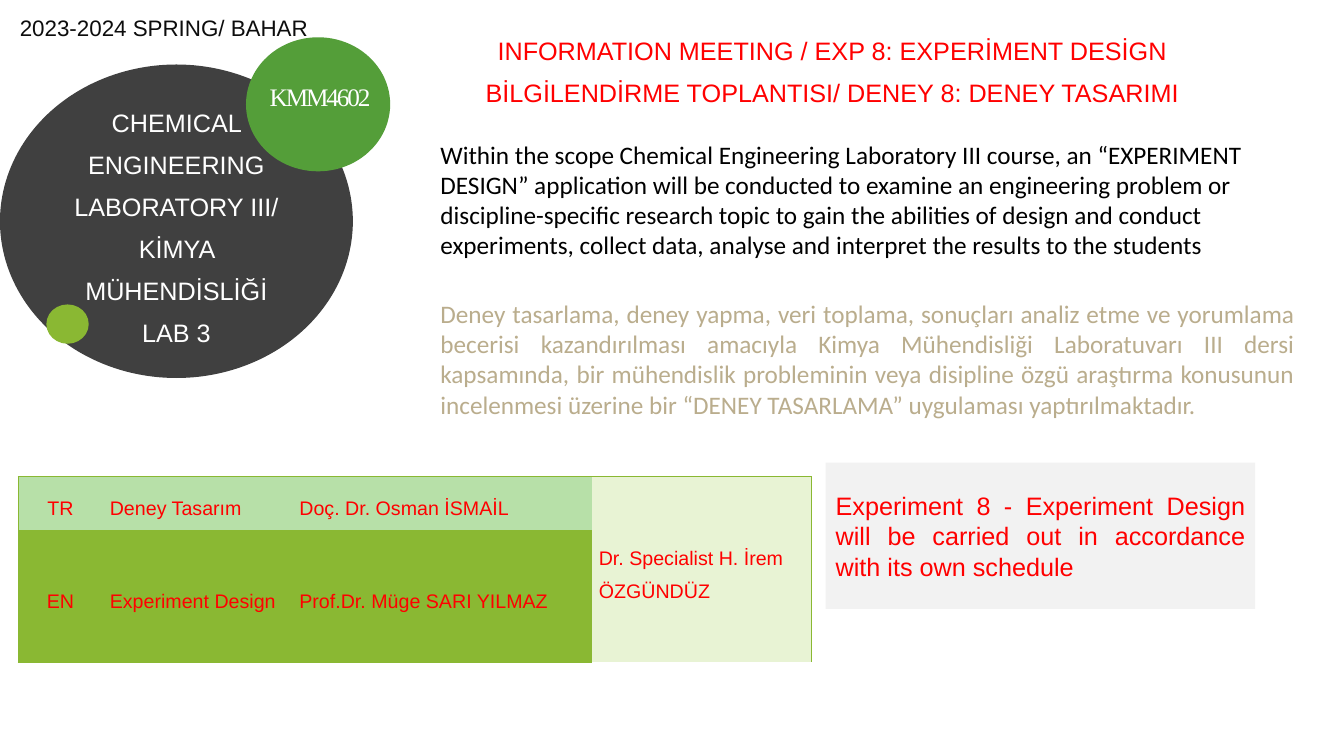
from lxml.etree import SubElement
from pptx import Presentation
from pptx.dml.color import RGBColor
from pptx.enum.shapes import MSO_SHAPE
from pptx.enum.text import MSO_ANCHOR, MSO_AUTO_SIZE, PP_ALIGN
from pptx.oxml.ns import qn
from pptx.util import Inches, Pt

RED, WHITE, GREEN = "FF0000", "FFFFFF", "8AB833"
FIXED_LINES = {"alignment": PP_ALIGN.CENTER, "line_spacing": Pt(30)}
JUSTIFIED = {"alignment": PP_ALIGN.JUSTIFY}
MARGINS = ("margin_left", "margin_top", "margin_right", "margin_bottom")


def color(hex_string):
    return RGBColor.from_string(hex_string)


def inches(box):
    return [Inches(length) for length in box]


def apply(target, values):
    for name, value in values.items():
        setattr(target, name, value)


def write(frame, lines, font, size, text_color, paragraph_format=None,
          anchor=MSO_ANCHOR.TOP):
    apply(frame, {"word_wrap": True, "auto_size": MSO_AUTO_SIZE.NONE,
                  "vertical_anchor": anchor})
    fill_paragraphs(frame, lines, font, size, text_color, paragraph_format)


def fill_paragraphs(frame, lines, font, size, text_color, paragraph_format):
    for index, line in enumerate(lines):
        paragraph = frame.add_paragraph() if index else frame.paragraphs[0]
        apply(paragraph, paragraph_format or {})
        run = paragraph.add_run()
        run.text = line
        apply(run.font, {"name": font, "size": Pt(size)})
        run.font.color.rgb = color(text_color)


def add_text(shapes, box, *text, **options):
    shape = shapes.add_textbox(*inches(box))
    write(shape.text_frame, *text, **options)
    return shape


def add_filled(shapes, kind, box, fill):
    shape = shapes.add_shape(kind, *inches(box))
    shape.shadow.inherit = False
    shape.fill.solid()
    shape.fill.fore_color.rgb = color(fill)
    shape.line.fill.background()
    return shape


def set_borders(cell, visible_sides):
    properties = cell._tc.get_or_add_tcPr()
    for side in "LRTB":
        line = SubElement(properties, qn(f"a:ln{side}"), w=str(Pt(0.5)))
        if side in visible_sides:
            fill = SubElement(line, qn("a:solidFill"))
            SubElement(fill, qn("a:srgbClr"), val=GREEN)
        else:
            SubElement(line, qn("a:noFill"))


def add_staff_table(slide):
    rows = [["TR", "Deney Tasarım", "Doç. Dr. Osman İSMAİL",
             "Dr. Specialist H. İrem ÖZGÜNDÜZ"],
            ["EN", "Experiment Design", "Prof.Dr. Müge SARI YILMAZ", ""]]
    widths, heights = [0.84, 1.88, 2.97, 2.18], [0.53, 1.31]
    row_fills, assistant_fill = ["B7E0A8", GREEN], "E8F3D4"
    box = (0.18, 4.73, sum(widths), sum(heights))
    table = slide.shapes.add_table(len(rows), len(widths), *inches(box)).table
    for column, width in zip(table.columns, widths):
        column.width = Inches(width)
    for row, height in zip(table.rows, heights):
        row.height = Inches(height)

    last = len(widths) - 1
    table.cell(0, last).merge(table.cell(1, last))
    for row_index, row in enumerate(rows):
        for column_index, text in enumerate(row):
            cell = table.cell(row_index, column_index)
            sides = "B" if row_index else "T"
            sides += {0: "L", last: "R"}.get(column_index, "")
            set_borders(cell, sides)
            cell.fill.solid()
            cell.fill.fore_color.rgb = color(
                assistant_fill if column_index == last else row_fills[row_index])
            apply(cell, dict(zip(MARGINS, inches((0.07, 0, 0.07, 0)))))
            cell.vertical_anchor = MSO_ANCHOR.MIDDLE
            if text:
                alignment = PP_ALIGN.LEFT if column_index else PP_ALIGN.CENTER
                fill_paragraphs(cell.text_frame, [text], "Arial", 14, RED,
                                {"alignment": alignment, "line_spacing": 1.5})


def add_course_badge(slide):
    shapes = slide.shapes.add_group_shape().shapes
    course = add_filled(shapes, MSO_SHAPE.OVAL, (0, 0.64, 3.5, 3.11), "404040")
    write(course.text_frame,
          ["CHEMICAL ENGINEERING LABORATORY III/", "KİMYA MÜHENDİSLİĞİ", "LAB 3"],
          "Arial", 18, WHITE, FIXED_LINES, MSO_ANCHOR.MIDDLE)
    add_filled(shapes, MSO_SHAPE.OVAL, (2.44, 0.37, 1.43, 1.33), "549E39")
    add_filled(shapes, MSO_SHAPE.OVAL, (0.46, 3.02, 0.42, 0.39), GREEN)
    code = add_text(shapes, (2.48, 0.84, 1.39, 1.29), ["KMM4602"],
                    "Times New Roman", 18, WHITE,
                    {"alignment": PP_ALIGN.CENTER, "line_spacing": 0.9})
    apply(code.text_frame, dict.fromkeys(MARGINS, 0))
    run = code.text_frame.paragraphs[0].runs[0]
    run.font._element.set("spc", "-150")


def main():
    presentation = Presentation()
    presentation.slide_width, presentation.slide_height = inches((13.33, 7.5))
    slide = presentation.slides.add_slide(presentation.slide_layouts[5])

    # Title
    title = slide.shapes.title
    apply(title, dict(zip(("left", "top", "width", "height"),
                          inches((4.57, 0.18, 7.37, 0.9)))))
    write(title.text_frame,
          ["INFORMATION MEETING / EXP 8: EXPERİMENT DESİGN",
           "BİLGİLENDİRME TOPLANTISI/ DENEY 8: DENEY TASARIMI"],
          "Arial", 18, RED, FIXED_LINES)

    # Course and term
    add_course_badge(slide)
    add_text(slide.shapes, (0, 0.07, 3.25, 0.4), ["2023-2024 SPRING/ BAHAR"],
             "Arial", 16, "0D0D0D", {"alignment": PP_ALIGN.CENTER},
             anchor=MSO_ANCHOR.MIDDLE)

    # Descriptions in English and Turkish
    add_text(slide.shapes, (4.27, 1.33, 8.6, 1.31),
             ["Within the scope Chemical Engineering Laboratory III course, an "
              "“EXPERIMENT DESIGN” application will be conducted to examine an "
              "engineering problem or discipline-specific research topic to gain "
              "the abilities of design and conduct experiments, collect data, "
              "analyse and interpret the results to the students"],
             "Calibri", 18, "000000")
    add_text(slide.shapes, (4.27, 2.91, 8.67, 1.31),
             ["Deney tasarlama, deney yapma, veri toplama, sonuçları analiz etme "
              "ve yorumlama becerisi kazandırılması amacıyla Kimya Mühendisliği "
              "Laboratuvarı III dersi kapsamında, bir mühendislik probleminin "
              "veya disipline özgü araştırma konusunun incelenmesi üzerine bir "
              "“DENEY TASARLAMA” uygulaması yaptırılmaktadır."],
             "Calibri", 18, "BAAD8D", JUSTIFIED)

    # Staff and schedule
    add_staff_table(slide)
    schedule = add_filled(slide.shapes, MSO_SHAPE.RECTANGLE,
                          (8.19, 4.59, 4.26, 1.45), "F2F2F2")
    write(schedule.text_frame,
          ["Experiment 8 - Experiment Design will be carried out in accordance "
           "with its own schedule"],
          "Arial", 18, RED, JUSTIFIED, MSO_ANCHOR.MIDDLE)

    presentation.save("out.pptx")


if __name__ == "__main__":
    main()
